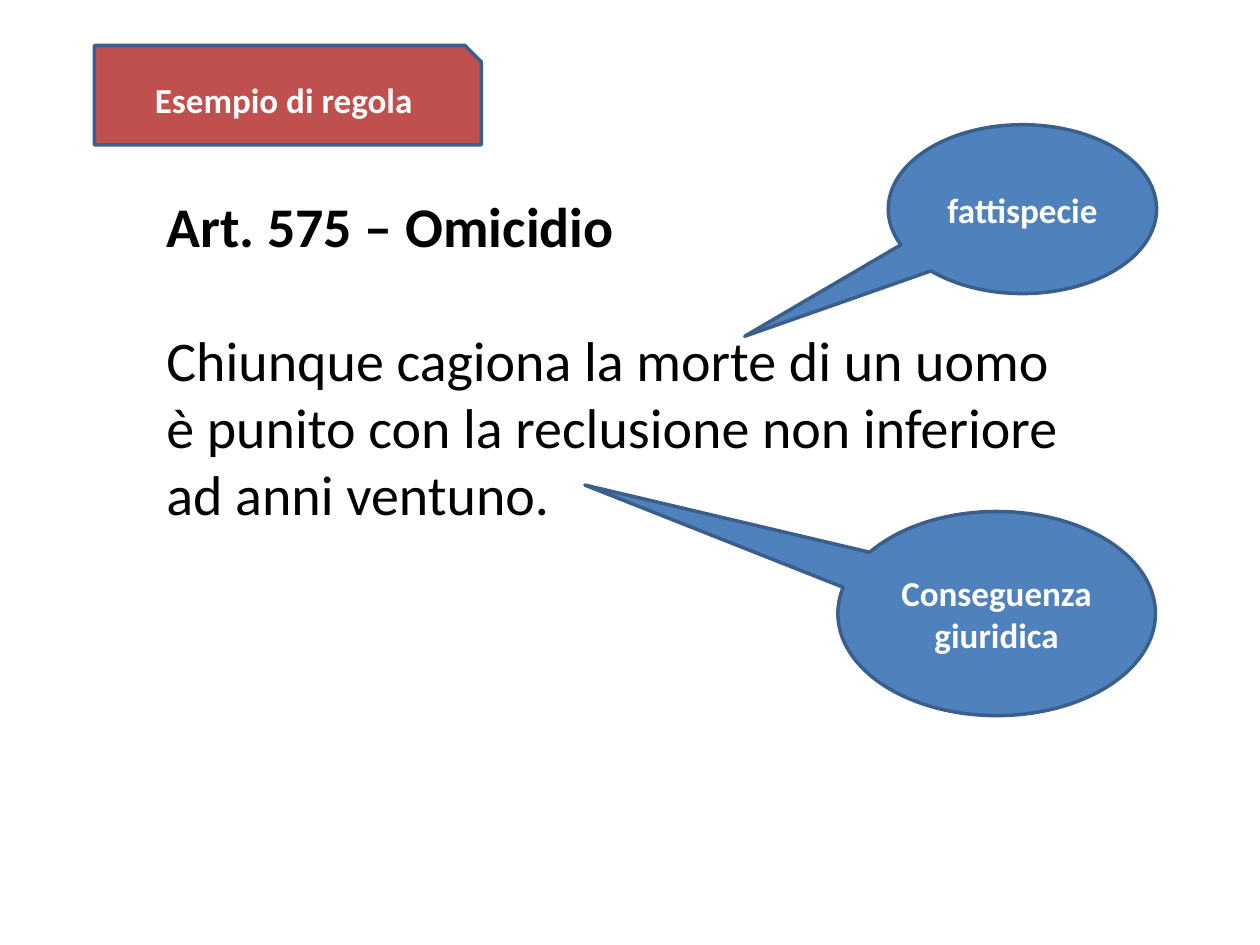
from lxml.etree import SubElement
from pptx import Presentation
from pptx.dml.color import RGBColor
from pptx.enum.shapes import MSO_SHAPE as Kind
from pptx.enum.text import MSO_ANCHOR as Anchor, MSO_AUTO_SIZE as Fit, PP_ALIGN as Align
from pptx.oxml.ns import qn
from pptx.util import Inches, Pt

BLACK = RGBColor(0x00, 0x00, 0x00)
WHITE = RGBColor(0xFF, 0xFF, 0xFF)
BLUE = RGBColor(0x4F, 0x81, 0xBD)
NAVY = RGBColor(0x3A, 0x5F, 0x8C)
RED = RGBColor(0xC0, 0x50, 0x4D)

LAW = {"name": "Calibri", "size": Pt(32)}
LABEL = {"name": "Calibri", "size": Pt(20), "bold": True}


def place(shape, box):
    for side, value in zip(("left", "top", "width", "height"), box):
        setattr(shape, side, Inches(value))


def write(shape, text, style, color, align, anchor):
    frame = shape.text_frame
    frame.word_wrap = True
    frame.auto_size = Fit.NONE
    frame.vertical_anchor = anchor
    frame.text = text
    para = frame.paragraphs[0]
    para.alignment = align
    para.space_before = Pt(0)
    font = para.runs[0].font
    for key, value in style.items():
        setattr(font, key, value)
    font.color.rgb = color
    return para


def add_law(slide, box, head, text):
    """Heading and wording of the article, two lines apart."""
    left, top, width, height = box
    gap = 1.06
    title, body = slide.shapes.title, slide.placeholders[1]
    place(title, (left, top, width, 0.64))
    place(body, (left, top + gap, width, height - gap))
    write(title, head, {**LAW, "bold": True}, BLACK, Align.LEFT, Anchor.TOP)
    para = write(body, text, {**LAW, "bold": False}, BLACK, Align.LEFT, Anchor.TOP)
    # Plain paragraph: no bullet, no indent
    props = para._p.get_or_add_pPr()
    props.set("marL", "0")
    props.set("indent", "0")
    SubElement(props, qn("a:buNone"))


def add_label(slide, box, kind, fill, text, tip=()):
    """Outlined shape with a centred label; tip aims a callout's tail."""
    shape = slide.shapes.add_shape(kind, *map(Inches, box))
    shape.shadow.inherit = False
    for i, value in enumerate(tip):
        shape.adjustments[i] = value
    shape.fill.solid()
    shape.fill.fore_color.rgb = fill
    shape.line.color.rgb = NAVY
    shape.line.width = Pt(2)
    write(shape, text, LABEL, WHITE, Align.CENTER, Anchor.MIDDLE)


def main():
    deck = Presentation()
    deck.slide_width, deck.slide_height = Inches(10), Inches(7.5)
    slide = deck.slides.add_slide(deck.slide_layouts[1])

    # Article
    add_law(slide, (1.22, 1.47, 7.4, 2.79), "Art. 575 – Omicidio",
            "Chiunque cagiona la morte di un uomo è punito con la "
            "reclusione non inferiore ad anni ventuno.")

    # Callouts for the two parts of the rule
    callouts = (
        ((7.05, 0.99, 2.13, 1.34), "fattispecie", (-1.035, 0.753)),
        ((6.65, 4.06, 2.52, 1.62), "Conseguenza giuridica", (-1.297, -0.63)),
    )
    for box, text, tip in callouts:
        add_label(slide, box, Kind.OVAL_CALLOUT, BLUE, text, tip)

    # Tag at the top
    add_label(slide, (0.75, 0.36, 3.07, 0.79), Kind.SNIP_1_RECTANGLE, RED,
              "Esempio di regola")

    deck.save("out.pptx")


if __name__ == "__main__":
    main()
